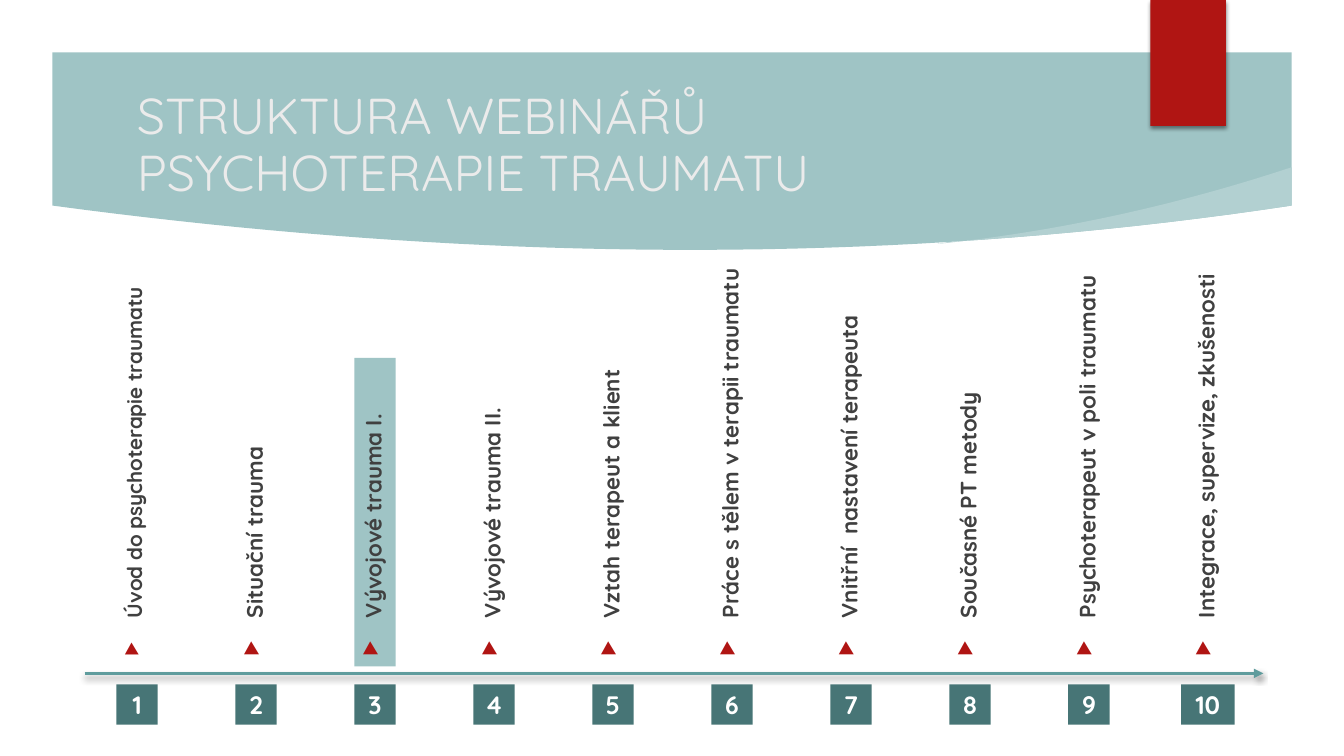
from dataclasses import dataclass

from lxml import etree
from pptx import Presentation
from pptx import util as u
from pptx.dml import color
from pptx.enum import shapes, text
from pptx.oxml import ns

SLIDE_W, SLIDE_H = 13.33, 7.5
FIRST_COLUMN, COLUMN = 1.36, 1.18  # centre of the first webinar, step to the next
LABEL_FOOT, LABEL_H = 6.61, 0.41
AXIS_Y, BADGE_TOP, BADGE_H = 6.68, 6.79, 0.4
TEAL, LIGHT_TEAL, AXIS_TEAL, DARK_TEAL = "9FC4C5", "B2D0D1", "5F9C9D", "477576"
RED, WHITE, TITLE_GREY, TEXT_GREY = "B01513", "FFFFFF", "EBEBEB", "404040"

Point = tuple[float, float]


@dataclass
class Webinar:
    topic: str
    length: float
    size: float = 16
    badge_width: float = 0.41
    current: bool = False


WEBINARS = [
    Webinar("Úvod do psychoterapie traumatu", 4.11, size=14.8),
    Webinar("Situační trauma", 2.85),
    Webinar("Vývojové trauma I.", 3.06, current=True),
    Webinar("Vývojové trauma II.", 2.79),
    Webinar("Vztah terapeut a klient", 3.11),
    Webinar("Práce s tělem v terapii traumatu", 4.11),
    Webinar("Vnitřní  nastavení terapeuta", 4.11),
    Webinar("Současné PT metody", 3.27),
    Webinar("Psychoterapeut v poli traumatu", 4.23),
    Webinar("Integrace, supervize, zkušenosti", 4.33, badge_width=0.53),
]


def rgb(value: str) -> color.RGBColor:
    return color.RGBColor.from_string(value)


def inches(*lengths: float) -> list[u.Length]:
    return [u.Inches(length) for length in lengths]


def paint(shape, fill: str) -> None:
    shape.fill.solid()
    shape.fill.fore_color.rgb = rgb(fill)
    shape.line.fill.background()
    shape.shadow.inherit = False


def drop_shadow(shape) -> None:
    properties = shape._element.spPr
    for old in properties.findall(ns.qn("a:effectLst")):
        properties.remove(old)
    effects = etree.SubElement(properties, ns.qn("a:effectLst"))
    shadow = etree.SubElement(effects, ns.qn("a:outerShdw"), blurRad=str(u.Pt(3)),
                              dist=str(u.Pt(2)), dir="5400000", rotWithShape="0")
    black = etree.SubElement(shadow, ns.qn("a:srgbClr"), val="000000")
    etree.SubElement(black, ns.qn("a:alpha"), val="45000")


def write(paragraph, words: str, size: float, colour: str, bold: bool = True) -> None:
    paragraph.text = words
    font = paragraph.runs[0].font
    for key, value in {"name": "Quicksand", "size": u.Pt(size), "bold": bold}.items():
        setattr(font, key, value)
    font.color.rgb = rgb(colour)


def add_bullet(paragraph) -> None:
    properties = paragraph._p.get_or_add_pPr()
    indent = u.Inches(0.38)
    properties.set("marL", str(indent))
    properties.set("indent", str(-indent))
    tint = etree.SubElement(properties, ns.qn("a:buClr"))
    etree.SubElement(tint, ns.qn("a:srgbClr"), val=RED)
    etree.SubElement(properties, ns.qn("a:buSzPct"), val="80000")
    etree.SubElement(properties, ns.qn("a:buChar"), char="▶")


def bezier(a: Point, b: Point, c: Point, d: Point, steps: int = 40) -> list[Point]:
    curve = []
    for step in range(steps + 1):
        t = step / steps
        shares = ((1 - t) ** 3, 3 * t * (1 - t) ** 2, 3 * t * t * (1 - t), t ** 3)
        curve.append(tuple(sum(s * p[axis] for s, p in zip(shares, (a, b, c, d)))
                           for axis in (0, 1)))
    return curve


def add_outline(slide, points: list[Point], fill: str) -> None:
    builder = slide.shapes.build_freeform(*inches(*points[0]), scale=1.0)
    builder.add_line_segments([inches(*point) for point in points[1:]], close=True)
    paint(builder.convert_to_shape(), fill)


def add_banner(slide) -> None:
    left, right, top, side = 0.52, 12.81, 0.52, 2.04
    hem = bezier((left, side), (4.62, 2.59), (8.71, 2.66), (right, side))
    add_outline(slide, [(right, top), (left, top), *hem], TEAL)
    # Lighter fold in the lower right corner
    crest = bezier((right, 1.66), (11.66, 2.04), (10.48, 2.3), (9.3, 2.42))
    add_outline(slide, crest + [point for point in hem if point[0] > 9.3], LIGHT_TEAL)
    ribbon = slide.shapes.add_shape(shapes.MSO_SHAPE.RECTANGLE, *inches(11.41, 0, 0.75, 1.25))
    paint(ribbon, RED)
    drop_shadow(ribbon)


def add_title(slide) -> None:
    frame = slide.shapes.add_textbox(*inches(1.26, 1.06, 9.65, 0.77)).text_frame
    for key, value in {"word_wrap": True, "vertical_anchor": text.MSO_ANCHOR.MIDDLE}.items():
        setattr(frame, key, value)
    heading = frame.paragraphs[0]
    write(heading, "STRUKTURA WEBINÁŘŮ PSYCHOTERAPIE TRAUMATU", 36, TITLE_GREY, bold=False)
    heading.line_spacing = 0.95


def add_axis(slide) -> None:
    axis = slide.shapes.add_connector(shapes.MSO_CONNECTOR.STRAIGHT,
                                      *inches(0.84, AXIS_Y, 12.53, AXIS_Y))
    axis.line.color.rgb = rgb(AXIS_TEAL)
    axis.line.width = u.Pt(2.25)
    etree.SubElement(axis.line._get_or_add_ln(), ns.qn("a:tailEnd"), type="triangle")
    drop_shadow(axis)


def add_label(slide, webinar: Webinar, centre: float) -> None:
    left = centre - webinar.length / 2
    top = LABEL_FOOT - webinar.length / 2 - LABEL_H / 2
    label = slide.shapes.add_textbox(*inches(left, top, webinar.length, LABEL_H))
    label.rotation = 270
    if webinar.current:
        paint(label, TEAL)
    label.text_frame.word_wrap = True
    topic = label.text_frame.paragraphs[0]
    add_bullet(topic)
    write(topic, webinar.topic, webinar.size, TEXT_GREY)


def add_badge(slide, number: int, width: float, centre: float) -> None:
    badge = slide.shapes.add_shape(shapes.MSO_SHAPE.RECTANGLE,
                                   *inches(centre - width / 2, BADGE_TOP, width, BADGE_H))
    paint(badge, DARK_TEAL)
    badge.text_frame.word_wrap = False
    digit = badge.text_frame.paragraphs[0]
    digit.alignment = text.PP_ALIGN.CENTER
    write(digit, str(number), 18, WHITE)


def main() -> None:
    deck = Presentation()
    deck.slide_width, deck.slide_height = inches(SLIDE_W, SLIDE_H)
    slide = deck.slides.add_slide(deck.slide_layouts[6])

    # Heading
    add_banner(slide)
    add_title(slide)

    # Timeline
    add_axis(slide)
    for index, webinar in enumerate(WEBINARS):
        centre = FIRST_COLUMN + index * COLUMN
        add_label(slide, webinar, centre)
        add_badge(slide, index + 1, webinar.badge_width, centre)

    deck.save("out.pptx")


if __name__ == "__main__":
    main()
